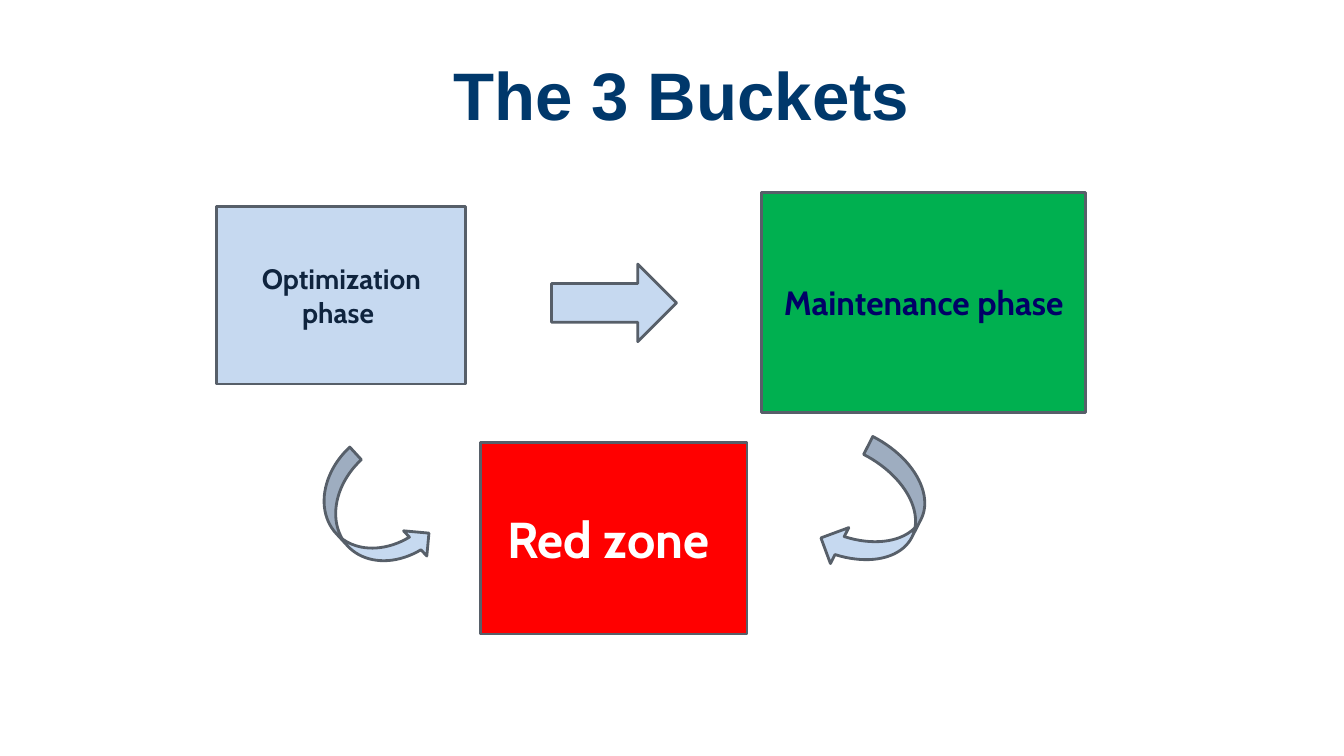
from pptx import Presentation
from pptx.dml.color import RGBColor as Rgb
from pptx.enum.shapes import MSO_SHAPE as Shape
from pptx.enum.text import MSO_ANCHOR as Anchor, PP_ALIGN as Align
from pptx.util import Inches, Pt

COLORS = {
    "title": "00386B", "outline": "575F69", "pale": "C6D9F0",
    "green": "00B050", "red": "FF0000",
    "white": "FFFFFF", "dark": "0F243E", "navy": "000066",
}


class BucketSlide:
    outline_width = Pt(2)

    def __init__(self, deck):
        self.page = deck.slides.add_slide(deck.slide_layouts[5])

    def label(self, shape, text, color, size, font):
        frame = shape.text_frame
        frame.word_wrap = True
        frame.vertical_anchor = Anchor.MIDDLE
        para = frame.paragraphs[0]
        para.alignment = Align.CENTER
        span = para.add_run()
        span.text = text
        for name, value in {"name": font, "size": Pt(size), "bold": True}.items():
            setattr(span.font, name, value)
        span.font.color.rgb = Rgb.from_string(COLORS[color])

    def title(self, text, place):
        title = self.page.shapes.title
        for name, value in zip(("left", "top", "width", "height"), place):
            setattr(title, name, Inches(value))
        self.label(title, text, "title", 48, "Arial")

    def shape(self, kind, place, fill):
        shape = self.page.shapes.add_shape(kind, *map(Inches, place))
        shape.shadow.inherit = False
        shape.fill.solid()
        shape.fill.fore_color.rgb = Rgb.from_string(COLORS[fill])
        shape.line.color.rgb = Rgb.from_string(COLORS["outline"])
        shape.line.width = self.outline_width
        return shape

    def bucket(self, text, place, fill, color, size):
        box = self.shape(Shape.RECTANGLE, place, fill)
        self.label(box, text, color, size, "Cabin")

    def arrow(self, kind, place, rotation=0, mirrored=False):
        arrow = self.shape(kind, place, "pale")
        arrow.rotation = rotation
        if mirrored:
            arrow.element.spPr.xfrm.set("flipH", "1")


def main():
    deck = Presentation()
    deck.slide_width, deck.slide_height = Inches(13.33), Inches(7.5)
    slide = BucketSlide(deck)
    slide.title(" The 3 Buckets", (0.67, 0.3, 12, 1.25))

    slide.bucket("Red zone ", (4.77, 4.39, 2.64, 1.9), "red", "white", 36)
    slide.bucket("Optimization phase ", (2.15, 2.05, 2.47, 1.76), "pale", "dark", 20)
    slide.bucket("Maintenance phase", (7.55, 1.91, 3.22, 2.18), "green", "navy", 24)

    slide.arrow(Shape.RIGHT_ARROW, (5.47, 2.62, 1.24, 0.77))
    slide.arrow(Shape.CURVED_LEFT_ARROW, (8.31, 4.44, 0.8, 1.33), 27.1)
    slide.arrow(Shape.CURVED_LEFT_ARROW, (3.33, 4.49, 0.68, 1.33), 317.4, mirrored=True)

    deck.save("out.pptx")


if __name__ == "__main__":
    main()
